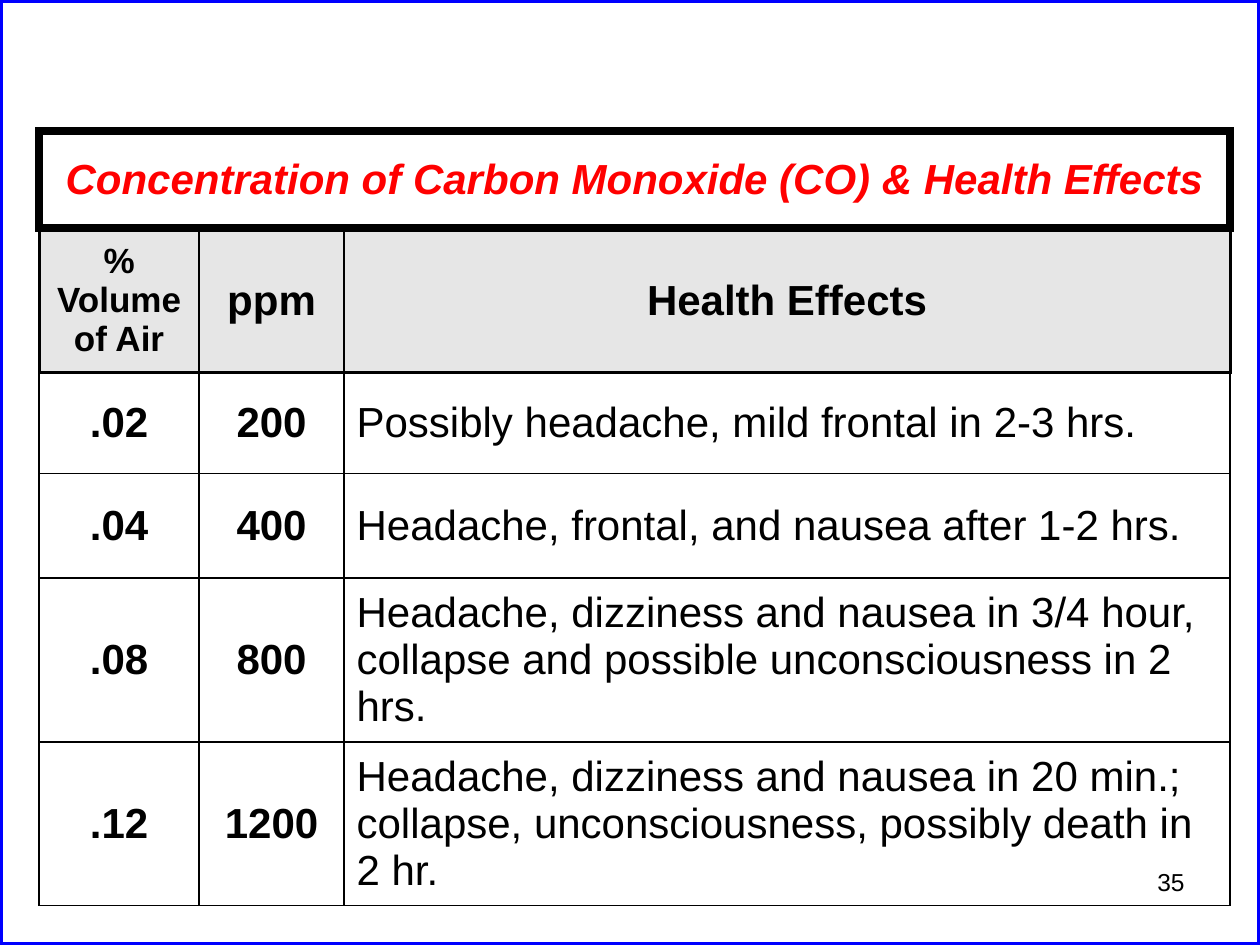
import pptx
import pptx.dml.color
import pptx.enum.shapes
import pptx.enum.text
import pptx.oxml
import pptx.oxml.ns
import pptx.util

Pt = pptx.util.Pt
ALIGN = pptx.enum.text.PP_ALIGN
BLACK, RED, BLUE, GREY = "000000", "FF0000", "0000FF", "E6E6E6"

TITLE = "Concentration of Carbon Monoxide (CO) & Health Effects"
HEADERS = ["% Volume of Air", "ppm", "Health Effects"]
EFFECTS = [
    (".02", "200", "Possibly headache, mild frontal in 2-3 hrs."),
    (".04", "400", "Headache, frontal, and nausea after 1-2 hrs."),
    (".08", "800", "Headache, dizziness and nausea in 3/4 hour, "
                   "collapse and possible unconsciousness in 2 hrs."),
    (".12", "1200", "Headache, dizziness and nausea in 20 min.; "
                    "collapse, unconsciousness, possibly death in 2 hr."),
]
COL_WIDTHS = [91.5, 82.8, 506.3]
ROW_HEIGHTS = [55.4, 82.8, 57.6, 59.6, 93.6, 93.6]


def rgb(hex_code):
    return pptx.dml.color.RGBColor.from_string(hex_code)


def write(tf, text, size=24, color=BLACK, bold=False, italic=False,
          align=ALIGN.LEFT, font="Arial"):
    tf.word_wrap = True
    p = tf.paragraphs[0]
    p.alignment = align
    r = p.add_run()
    r.text = text
    r.font.name, r.font.size = font, Pt(size)
    r.font.bold, r.font.italic = bold, italic
    r.font.color.rgb = rgb(color)


def set_borders(cell, left, right, top, bottom):
    """Draw the four black cell edges with the given widths in points."""
    tc_pr = cell._tc.get_or_add_tcPr()
    for side, width in zip("LRTB", (left, right, top, bottom)):
        tc_pr.append(pptx.oxml.parse_xml(
            f'<a:ln{side} {pptx.oxml.ns.nsdecls("a")} w="{Pt(width)}">'
            f'<a:solidFill><a:srgbClr val="{BLACK}"/></a:solidFill>'
            f'</a:ln{side}>'))


class SlideBuilder:
    def __init__(self, slide):
        self.s = slide

    def frame(self, width, height, color, line_width):
        sp = self.s.shapes.add_shape(
            pptx.enum.shapes.MSO_SHAPE.RECTANGLE, 0, 0, width, height)
        sp.shadow.inherit = False
        sp.fill.background()
        sp.line.color.rgb = rgb(color)
        sp.line.width = Pt(line_width)

    def text(self, left, top, width, height, text, **fmt):
        sp = self.s.shapes.add_textbox(Pt(left), Pt(top), Pt(width), Pt(height))
        write(sp.text_frame, text, **fmt)

    def table(self, left, top, col_widths, row_heights):
        table = self.s.shapes.add_table(
            len(row_heights), len(col_widths), Pt(left), Pt(top),
            Pt(sum(col_widths)), Pt(sum(row_heights))).table
        table.first_row = table.horz_banding = False
        for col, width in zip(table.columns, col_widths):
            col.width = Pt(width)
        for row, height in zip(table.rows, row_heights):
            row.height = Pt(height)
        return table

    def cell(self, cell, text, borders, fill=None, **fmt):
        cell.vertical_anchor = pptx.enum.text.MSO_ANCHOR.MIDDLE
        set_borders(cell, *borders)
        if fill:
            cell.fill.solid()
            cell.fill.fore_color.rgb = rgb(fill)
        else:
            cell.fill.background()
        if text:
            write(cell.text_frame, text, **fmt)


def main():
    prs = pptx.Presentation()
    prs.slide_width, prs.slide_height = Pt(720), Pt(540)
    b = SlideBuilder(prs.slides.add_slide(prs.slide_layouts[6]))
    b.frame(prs.slide_width, prs.slide_height, BLUE, 3)
    b.text(516, 492, 168, 37.5, "35", size=14, align=ALIGN.RIGHT)

    table = b.table(22.3, 74.9, COL_WIDTHS, ROW_HEIGHTS)
    last = len(COL_WIDTHS) - 1
    table.cell(0, 0).merge(table.cell(0, last))
    for c, header in enumerate(HEADERS):
        b.cell(table.cell(0, c), TITLE if c == 0 else "", (5, 5, 5, 5),
               color=RED, bold=True, italic=True, align=ALIGN.CENTER)
        b.cell(table.cell(1, c), header,
               (2 if c == 0 else 1, 2 if c == last else 1, 5, 2), fill=GREY,
               size=20 if c == 0 else 24, bold=True, align=ALIGN.CENTER)
    for i, row in enumerate(EFFECTS):
        for c, text in enumerate(row):
            b.cell(table.cell(i + 2, c), text, (1, 1, 2 if i == 0 else 1, 1),
                   bold=c < last,
                   align=ALIGN.CENTER if c < last else ALIGN.LEFT)
    prs.save("out.pptx")


if __name__ == "__main__":
    main()
